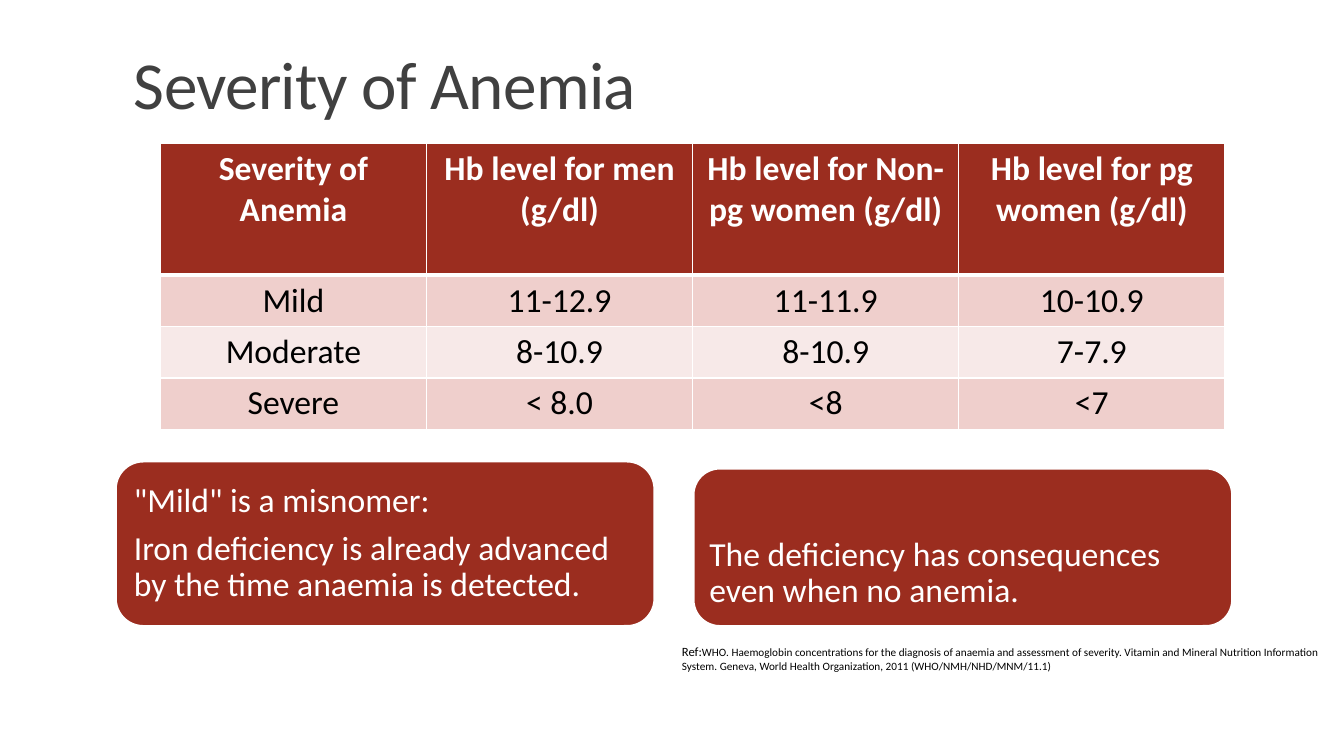
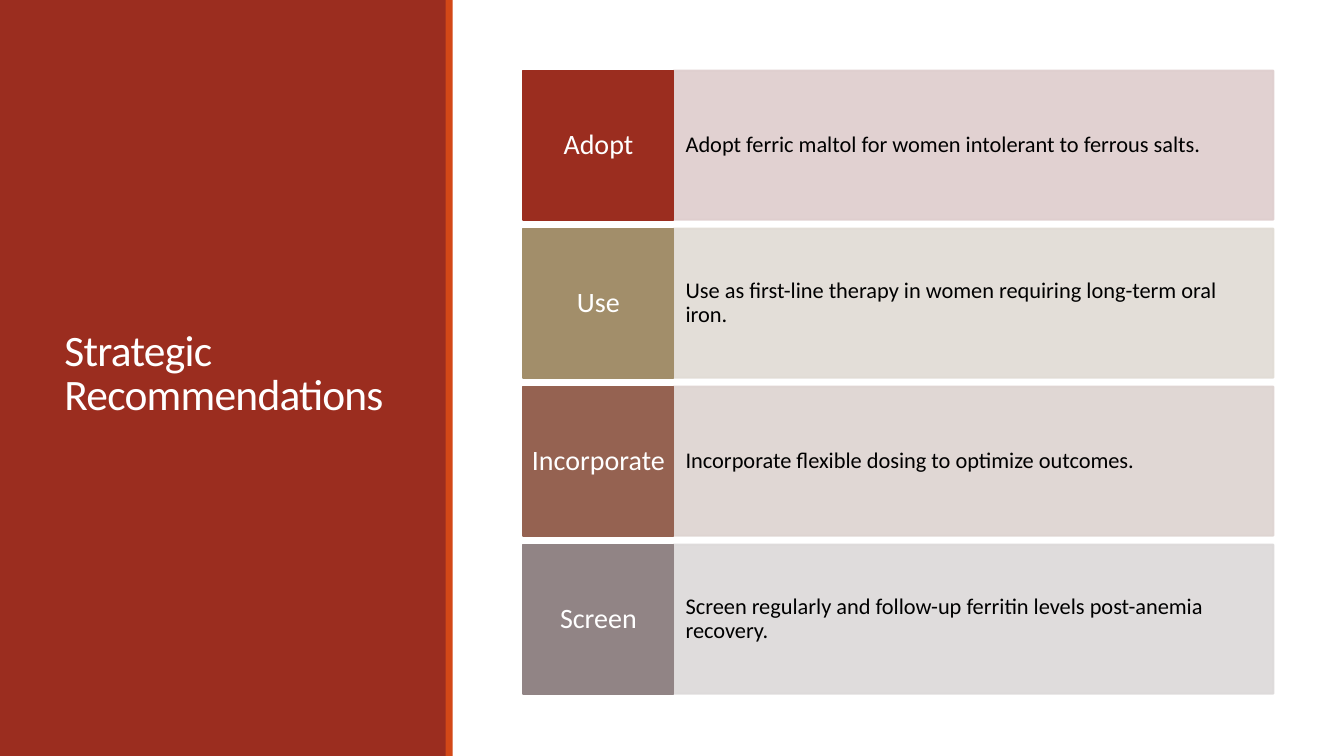
from lxml import etree
from pptx import Presentation, util as u
from pptx.dml.color import RGBColor
from pptx.enum import shapes, text
from pptx.oxml.ns import qn

WIDTH, HEIGHT = 13.33, 7.5
FONT = "Calibri"
WHITE, BLACK = RGBColor(255, 255, 255), RGBColor(0, 0, 0)
GREY = RGBColor(0x40, 0x40, 0x40)
RED, ORANGE = RGBColor(0x9B, 0x2D, 0x1F), RGBColor(0xD3, 0x48, 0x17)
ROW_TINTS = RGBColor(0xEF, 0xCF, 0xCC), RGBColor(0xF7, 0xE9, 0xE8)
MIDDLE, BOTTOM = text.MSO_ANCHOR.MIDDLE, text.MSO_ANCHOR.BOTTOM
LEFT, CENTER = text.PP_ALIGN.LEFT, text.PP_ALIGN.CENTER
RECT, ROUNDED = shapes.MSO_SHAPE.RECTANGLE, shapes.MSO_SHAPE.ROUNDED_RECTANGLE

SEVERITY = [
    ("Severity of Anemia", "Hb level for men (g/dl)",
     "Hb level for Non-pg women (g/dl)", "Hb level for pg women (g/dl)"),
    ("Mild", "11-12.9", "11-11.9", "10-10.9"),
    ("Moderate", "8-10.9", "8-10.9", "7-7.9"),
    ("Severe", "< 8.0", "<8", "<7"),
]
# box, insets, anchor, paragraphs
MESSAGES = [
    ((1.15, 4.58, 5.34, 1.63), (0.1, 0.1), MIDDLE,
     ['"Mild" is a misnomer:',
      "Iron deficiency is already advanced by the time anaemia is detected."]),
    ((6.88, 4.65, 5.34, 1.56), (0.08, 0.08), BOTTOM,
     ["The deficiency has consequences even when no anemia."]),
]
REFERENCE = [
    ("Ref:", 9),
    ("WHO. Haemoglobin concentrations for the diagnosis of anaemia and assessment "
     "of severity. Vitamin and Mineral Nutrition Information System. Geneva, World "
     "Health Organization, 2011 (WHO/NMH/NHD/MNM/11.1)", 8),
]
RECOMMENDATIONS = [
    ("Adopt", "Adopt ferric maltol for women intolerant to ferrous salts.",
     RED, RGBColor(0xDE, 0xCD, 0xCD)),
    ("Use", "Use as first-line therapy in women requiring long-term oral iron.",
     RGBColor(0xA2, 0x8E, 0x6A), RGBColor(0xE0, 0xDB, 0xD4)),
    ("Incorporate", "Incorporate flexible dosing to optimize outcomes.",
     RGBColor(0x95, 0x62, 0x51), RGBColor(0xDD, 0xD3, 0xD0)),
    ("Screen", "Screen regularly and follow-up ferritin levels post-anemia recovery.",
     RGBColor(0x91, 0x84, 0x85), RGBColor(0xDC, 0xD9, 0xD9)),
]


def inches(box):
    return [u.Inches(v) for v in box]


def style(p, size, color, bold=False):
    p.font.name, p.font.size, p.font.bold = FONT, u.Pt(size), bold
    p.font.color.rgb = color


def write(sp, paragraphs, size, color, align=LEFT, anchor=MIDDLE,
          insets=(0.1, 0.05), spacing=0.9):
    tf = sp.text_frame
    tf.word_wrap, tf.vertical_anchor = True, anchor
    tf.margin_left = tf.margin_right = u.Inches(insets[0])
    tf.margin_top = tf.margin_bottom = u.Inches(insets[1])
    for i, line in enumerate(paragraphs):
        p = tf.add_paragraph() if i else tf.paragraphs[0]
        p.add_run().text = line
        p.alignment, p.line_spacing = align, spacing
        p.space_after = u.Pt(0.35 * size)
        style(p, size, color)


def add_title(slide, box, title, size, color, anchor):
    sp = slide.shapes.add_textbox(*inches(box))
    write(sp, [title], size, color, anchor=anchor, spacing=0.85)
    sp.text_frame.paragraphs[0].runs[0]._r.get_or_add_rPr().set("spc", "-50")


def add_block(slide, kind, box, fill, line=None, opacity=100):
    sp = slide.shapes.add_shape(kind, *inches(box))
    sp.shadow.inherit = False
    sp.fill.solid()
    sp.fill.fore_color.rgb = fill
    if line is None:
        sp.line.fill.background()
    else:
        sp.line.color.rgb, sp.line.width = line, u.Pt(1.25)
    if opacity < 100:
        for color in sp._element.spPr.iter(qn("a:srgbClr")):
            etree.SubElement(color, qn("a:alpha")).set("val", str(opacity * 1000))
    return sp


def add_borders(cell, bottom):
    """White edges, one point wide except for the bottom one."""
    tcPr = cell._tc.get_or_add_tcPr()
    for i, (side, width) in enumerate(zip("LRTB", (1, 1, 1, bottom))):
        ln = etree.Element(qn("a:ln" + side), w=str(u.Pt(width)))
        fill = etree.SubElement(ln, qn("a:solidFill"))
        etree.SubElement(fill, qn("a:srgbClr")).set("val", str(WHITE))
        tcPr.insert(i, ln)


def add_severity_table(slide):
    heights = [1.31] + [0.51] * (len(SEVERITY) - 1)
    table = slide.shapes.add_table(
        len(SEVERITY), len(SEVERITY[0]),
        *inches((1.59, 1.42, 10.56, sum(heights)))).table
    for r, values in enumerate(SEVERITY):
        table.rows[r].height = u.Inches(heights[r])
        header = r == 0
        for c, value in enumerate(values):
            cell = table.cell(r, c)
            cell.text = value
            p = cell.text_frame.paragraphs[0]
            p.alignment = CENTER
            style(p, 24, WHITE if header else BLACK, header)
            cell.fill.solid()
            cell.fill.fore_color.rgb = RED if header else ROW_TINTS[(r - 1) % 2]
            add_borders(cell, 3 if header else 1)


def severity_slide(slide):
    add_title(slide, (1.23, 0.42, 11, 0.85), "Severity of Anemia", 48, GREY, BOTTOM)
    add_severity_table(slide)
    for box, insets, anchor, lines in MESSAGES:
        sp = add_block(slide, ROUNDED, box, RED, WHITE)
        write(sp, lines, 24, WHITE, anchor=anchor, insets=insets)
    sp = slide.shapes.add_textbox(*inches((WIDTH / 2, 6.34, WIDTH / 2, 0.39)))
    sp.text_frame.word_wrap = True
    p = sp.text_frame.paragraphs[0]
    style(p, 8, BLACK)
    for part, size in REFERENCE:
        r = p.add_run()
        r.text, r.font.size = part, u.Pt(size)


def recommendations_slide(slide):
    add_block(slide, RECT, (0, 0, 4.43, HEIGHT), RED)
    add_title(slide, (0.54, 0.57, 3.55, 6.31), "Strategic Recommendations",
              31, WHITE, MIDDLE)
    add_block(slide, RECT, (4.42, 0, 0.07, HEIGHT), ORANGE)
    left, top, label_width, text_width, height = 5.19, 0.7, 1.49, 5.95, 1.48
    pitch = (HEIGHT - 2 * top + 0.17) / len(RECOMMENDATIONS)
    for i, (label, advice, color, tint) in enumerate(RECOMMENDATIONS):
        y = top + i * pitch
        sp = add_block(slide, RECT, (left + label_width, y, text_width, height),
                       tint, tint, opacity=90)
        write(sp, [advice], 16, BLACK, insets=(0.12, 0.38))
        sp = add_block(slide, RECT, (left, y, label_width, height), color, color)
        write(sp, [label], 20, WHITE, CENTER, insets=(0.08, 0.15))


def main():
    prs = Presentation()
    prs.slide_width, prs.slide_height = inches((WIDTH, HEIGHT))
    for build in (severity_slide, recommendations_slide):
        build(prs.slides.add_slide(prs.slide_layouts[6]))
    prs.save("out.pptx")


if __name__ == "__main__":
    main()
